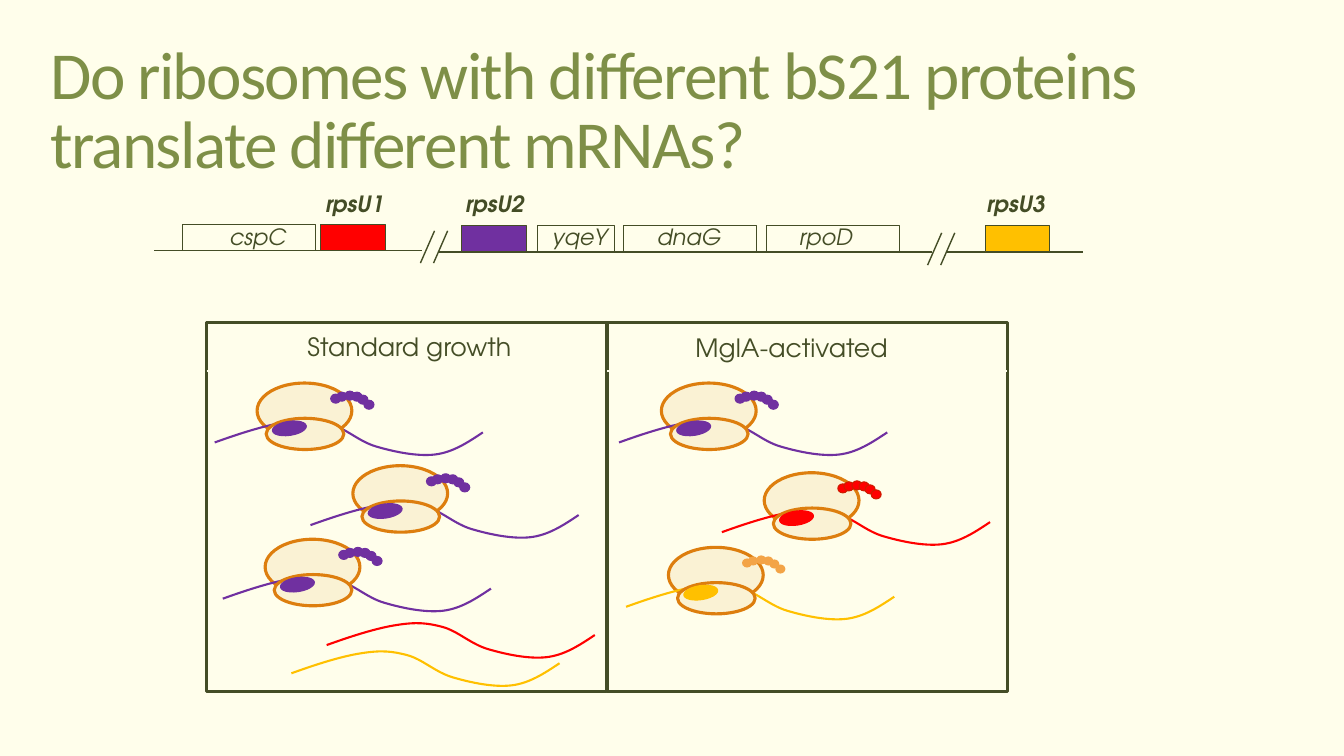
import pptx
import pptx.util
import pptx.dml.color
import pptx.enum.shapes
import pptx.enum.text
import pptx.oxml
import pptx.oxml.ns

PX = 9144
BACKGROUND, INK, TITLE_GREEN = "FFFEEB", "444D26", "7E8F47"
PURPLE, RED, GOLD = "7030A0", "FF0000", "FFC000"
BODY_FILL, BODY_LINE = "FAF2D4", "DD7E0E"
CALIBRI, ADVENTOR = "Calibri", "TeX Gyre Adventor"

TITLE = "Do ribosomes with different bS21 proteins translate different mRNAs?"

LOCI = [
    {
        "strand": (153, 419, 249),
        "genes": [(181, 223, 132, None), (318, 223, 64, RED)],
        "labels": [("rpsU1", 313, 184, 79, True), ("cspC", 218, 216, 77, False)],
        "break": (431, 229),
    },
    {
        "strand": (435, 924, 250),
        "genes": [(458, 224, 64, PURPLE), (533, 224, 77, None),
                  (618, 224, 132, None), (760, 224, 132, None)],
        "labels": [("rpsU2", 452, 184, 79, True), ("yqeY", 538, 216, 75, False),
                   ("dnaG", 642, 216, 84, False), ("rpoD", 783, 216, 74, False)],
        "break": (934, 231),
    },
    {
        "strand": (939, 1074, 250),
        "genes": [(977, 224, 64, GOLD)],
        "labels": [("rpsU3", 969, 184, 79, True)],
        "break": None,
    },
]

PURPLE_SET = (PURPLE, PURPLE, PURPLE)
RED_SET = (RED, RED, "CD1C00")
GOLD_SET = (GOLD, "F3A447", None)

PANELS = [
    {
        "left": 205,
        "heading": ("Standard growth", 295, 324, 227),
        "ribosomes": [(221, 572, PURPLE_SET), (308, 499, PURPLE_SET), (213, 417, PURPLE_SET)],
        "free_mrnas": [(324, 618, RED), (289, 646, GOLD)],
    },
    {
        "left": 602,
        "heading": ("MglA-activated", 680, 325, 213),
        "ribosomes": [(716, 506, RED_SET), (621, 580, GOLD_SET), (614, 417, PURPLE_SET)],
        "free_mrnas": [],
    },
]
PANEL_TOP, PANEL_WIDTH, PANEL_HEIGHT, HEADING_RULE = 320, 397, 366, 368

MRNA_CURVE = [(0, 22), (25, 13), (50, 5), (70, 2), (89, -1), (100, 0), (115, 4), (130, 8),
              (143, 21), (160, 26), (177, 31), (200, 36), (218, 34), (236, 32), (251, 22), (266, 12)]
PEPTIDE = [(115, -26), (121, -28), (129, -29), (136, -28), (142, -25), (148, -20)]

RECT = pptx.enum.shapes.MSO_SHAPE.RECTANGLE
OVAL = pptx.enum.shapes.MSO_SHAPE.OVAL


def px(*lengths):
    return [pptx.util.Emu(length * PX) for length in lengths]


def rgb(value):
    return pptx.dml.color.RGBColor.from_string(value)


def paint(shape, fill, line, width):
    shape.shadow.inherit = False
    if fill:
        shape.fill.solid()
        shape.fill.fore_color.rgb = rgb(fill)
    else:
        shape.fill.background()
    if line:
        shape.line.color.rgb = rgb(line)
        shape.line.width = pptx.util.Pt(width)
    else:
        shape.line.fill.background()


def add_form(group, kind, box, fill, line, width=0.75):
    shape = group.shapes.add_shape(kind, *px(*box))
    paint(shape, fill, line, width)
    return shape


def add_line(group, start, end, color, width):
    line = group.shapes.add_connector(pptx.enum.shapes.MSO_CONNECTOR.STRAIGHT, *px(*start, *end))
    line.line.color.rgb = rgb(color)
    line.line.width = pptx.util.Pt(width)
    pptx.oxml.ns.qn("a:effectLst")
    line._element.spPr.append(line._element.makeelement(pptx.oxml.ns.qn("a:effectLst")))


def add_run(paragraph, text, font, size, color, bold=False, italic=False):
    run = paragraph.add_run()
    run.text = text
    run.font.name = font
    run.font.size = pptx.util.Pt(size)
    run.font.color.rgb = rgb(color)
    run.font.bold = bold
    run.font.italic = italic
    return run


def add_label(group, text, box, size, bold=False, italic=False):
    frame = group.shapes.add_textbox(*px(*box)).text_frame
    frame.word_wrap = False
    frame.auto_size = pptx.enum.text.MSO_AUTO_SIZE.SHAPE_TO_FIT_TEXT
    add_run(frame.paragraphs[0], text, ADVENTOR, size, INK, bold, italic)


def add_mrna(group, left, top, color):
    start, *rest = [(left + x, top + y) for x, y in MRNA_CURVE]
    builder = group.shapes.build_freeform(*start, scale=PX)
    builder.add_line_segments(rest, close=False)
    mrna = builder.convert_to_shape()
    paint(mrna, None, color, 1.5)
    segments = list(mrna._element.iter(pptx.oxml.ns.qn("a:lnTo")))
    for first in range(0, len(segments), 3):
        curve = mrna._element.makeelement(pptx.oxml.ns.qn("a:cubicBezTo"))
        segments[first].addprevious(curve)
        for segment in segments[first:first + 3]:
            curve.append(segment[0])
            segment.getparent().remove(segment)


def add_ribosome(group, left, top, colors):
    mrna, bead, bead_line = colors
    add_form(group, OVAL, (left + 42, top - 37, 94, 55), BODY_FILL, BODY_LINE, 2.25)
    for x, y in PEPTIDE:
        add_form(group, OVAL, (left + x, top + y, 10, 9), bead, bead_line)
    add_mrna(group, left, top, mrna)
    add_form(group, OVAL, (left + 51, top - 2, 77, 31), BODY_FILL, BODY_LINE, 2.25)
    protein = add_form(group, OVAL, (left + 57, top + 1, 34, 14), mrna, mrna)
    protein.rotation = 351.6


def add_title(slide):
    title = slide.shapes.title
    title.left, title.top, title.width, title.height = px(40, 22, 1178, 181)
    frame = title.text_frame
    frame.word_wrap = True
    frame.auto_size = pptx.enum.text.MSO_AUTO_SIZE.NONE
    frame.vertical_anchor = pptx.enum.text.MSO_ANCHOR.MIDDLE
    paragraph = frame.paragraphs[0]
    paragraph.alignment = pptx.enum.text.PP_ALIGN.LEFT
    paragraph.line_spacing = 0.85
    run = add_run(paragraph, TITLE, CALIBRI, 48, TITLE_GREEN)
    run.font._element.set("spc", "-120")


def add_locus(slide, locus):
    group = slide.shapes.add_group_shape()
    left, right, level = locus["strand"]
    add_line(group, (left, level), (right, level), INK, 0.75)
    for x, y, width, fill in locus["genes"]:
        add_form(group, RECT, (x, y, width, 26), fill, INK)
    for text, x, y, width, bold in locus["labels"]:
        add_label(group, text, (x, y, width, 37), 16, bold, True)
    if locus["break"]:
        x, y = locus["break"]
        for shift in (0, 13):
            add_line(group, (x + shift, y), (x + shift - 14, y + 32), INK, 1)


def add_panel(slide, panel):
    group = slide.shapes.add_group_shape()
    for ribosome in panel["ribosomes"]:
        add_ribosome(group, *ribosome)
    for mrna in panel["free_mrnas"]:
        add_mrna(group, *mrna)
    text, x, y, width = panel["heading"]
    add_label(group, text, (x, y, width, 40), 18)
    left = panel["left"]
    add_form(group, RECT, (left, PANEL_TOP, PANEL_WIDTH, PANEL_HEIGHT), None, INK, 2.25)
    add_line(group, (left, HEADING_RULE), (left + PANEL_WIDTH, HEADING_RULE), BACKGROUND, 1)


def main():
    deck = pptx.Presentation()
    deck.slide_width, deck.slide_height = px(1333, 750)
    slide = deck.slides.add_slide(deck.slide_layouts[5])
    slide.background.fill.solid()
    slide.background.fill.fore_color.rgb = rgb(BACKGROUND)
    add_title(slide)
    for locus in LOCI:
        add_locus(slide, locus)
    for panel in PANELS:
        add_panel(slide, panel)
    deck.save("out.pptx")


if __name__ == "__main__":
    main()
